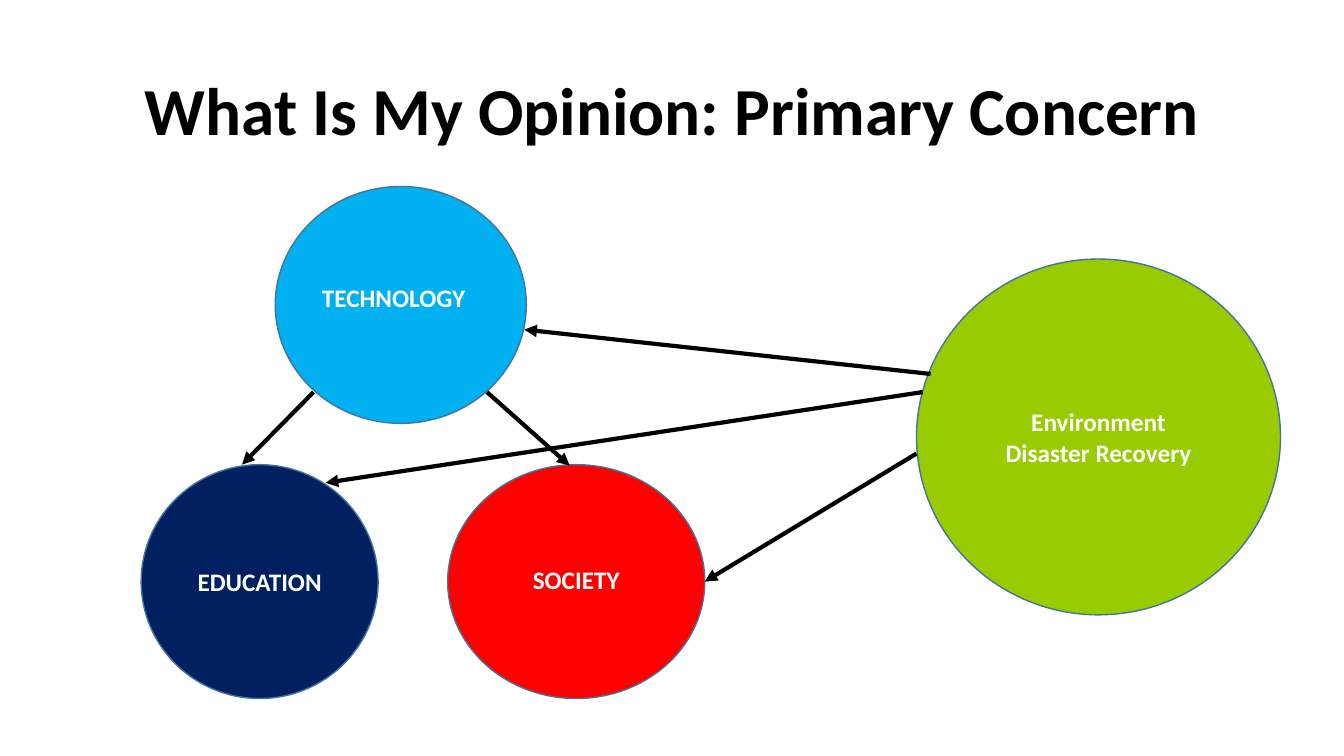
from dataclasses import dataclass

from lxml import etree
from pptx import Presentation
from pptx import util as u
from pptx.dml.color import RGBColor
from pptx.enum import shapes, text
from pptx.oxml import ns

PX = u.Inches(1) // 100  # 100 px to the inch


@dataclass(frozen=True)
class Theme:
    font: str = "Calibri"
    title_size: int = 48
    label_size: int = 18
    ink: str = "000000"
    label: str = "FFFFFF"
    outline: str = "43739E"
    technology: str = "00B0F0"
    education: str = "002060"
    society: str = "FF0000"
    environment: str = "99CC00"


@dataclass(frozen=True)
class Concern:
    label: str
    box: tuple[int, int, int, int]
    fill: str
    align: text.PP_ALIGN = text.PP_ALIGN.CENTER
    spacing: float = 1.0
    bottom_inset: int = 5


@dataclass(frozen=True)
class Influence:
    start: tuple[int, int]
    end: tuple[int, int]


THEME = Theme()

CONCERNS = [
    Concern("SOCIETY", (444, 461, 255, 232), THEME.society, spacing=0.9),
    Concern("TECHNOLOGY", (273, 185, 249, 235), THEME.technology,
            align=text.PP_ALIGN.LEFT, spacing=0.9, bottom_inset=16),
    Concern("EDUCATION", (140, 461, 235, 232), THEME.education),
    Concern("Environment\vDisaster Recovery", (909, 257, 361, 353), THEME.environment),
]

INFLUENCES = [
    Influence((311, 389), (240, 461)),  # technology to education
    Influence((483, 389), (565, 462)),  # technology to society
    Influence((923, 371), (520, 327)),  # environment to technology
    Influence((909, 450), (699, 577)),  # environment to society
    Influence((915, 389), (323, 479)),  # environment to education
]


def px(*lengths: int) -> list[int]:
    return [length * PX for length in lengths]


def write(frame, words: str, size: int, color: str, align: text.PP_ALIGN,
          spacing: float) -> None:
    frame.word_wrap = True
    frame.vertical_anchor = text.MSO_ANCHOR.MIDDLE
    paragraph = frame.paragraphs[0]
    paragraph.text = words
    paragraph.alignment = align
    paragraph.line_spacing = spacing
    font_format = {"name": THEME.font, "size": u.Pt(size), "bold": True}
    for run in paragraph.runs:
        for attribute, value in font_format.items():
            setattr(run.font, attribute, value)
        run.font.color.rgb = RGBColor.from_string(color)


def draw_concern(slide, concern: Concern) -> None:
    circle = slide.shapes.add_shape(shapes.MSO_SHAPE.OVAL, *px(*concern.box))
    circle.shadow.inherit = False
    circle.fill.solid()
    circle.fill.fore_color.rgb = RGBColor.from_string(concern.fill)
    circle.line.color.rgb = RGBColor.from_string(THEME.outline)
    circle.line.width = u.Pt(1)
    circle.text_frame.margin_bottom = concern.bottom_inset * PX
    write(circle.text_frame, concern.label, THEME.label_size, THEME.label,
          concern.align, concern.spacing)


def draw_influence(slide, influence: Influence) -> None:
    arrow = slide.shapes.add_connector(
        shapes.MSO_CONNECTOR.STRAIGHT, *px(*influence.start, *influence.end))
    arrow.line.color.rgb = RGBColor.from_string(THEME.ink)
    arrow.line.width = u.Pt(3)
    etree.SubElement(arrow.line._get_or_add_ln(), ns.qn("a:tailEnd"), type="triangle")
    etree.SubElement(arrow._element.spPr, ns.qn("a:effectLst"))


def main() -> None:
    deck = Presentation()
    deck.slide_width, deck.slide_height = px(1333, 750)
    slide = deck.slides.add_slide(deck.slide_layouts[6])

    # Title
    title = slide.shapes.add_textbox(*px(92, 40, 1150, 145))
    write(title.text_frame, "What Is My Opinion: Primary Concern",
          THEME.title_size, THEME.ink, text.PP_ALIGN.CENTER, 0.9)

    # Concerns
    for concern in CONCERNS:
        draw_concern(slide, concern)

    # Arrows between the concerns
    for influence in INFLUENCES:
        draw_influence(slide, influence)

    deck.save("out.pptx")


if __name__ == "__main__":
    main()
